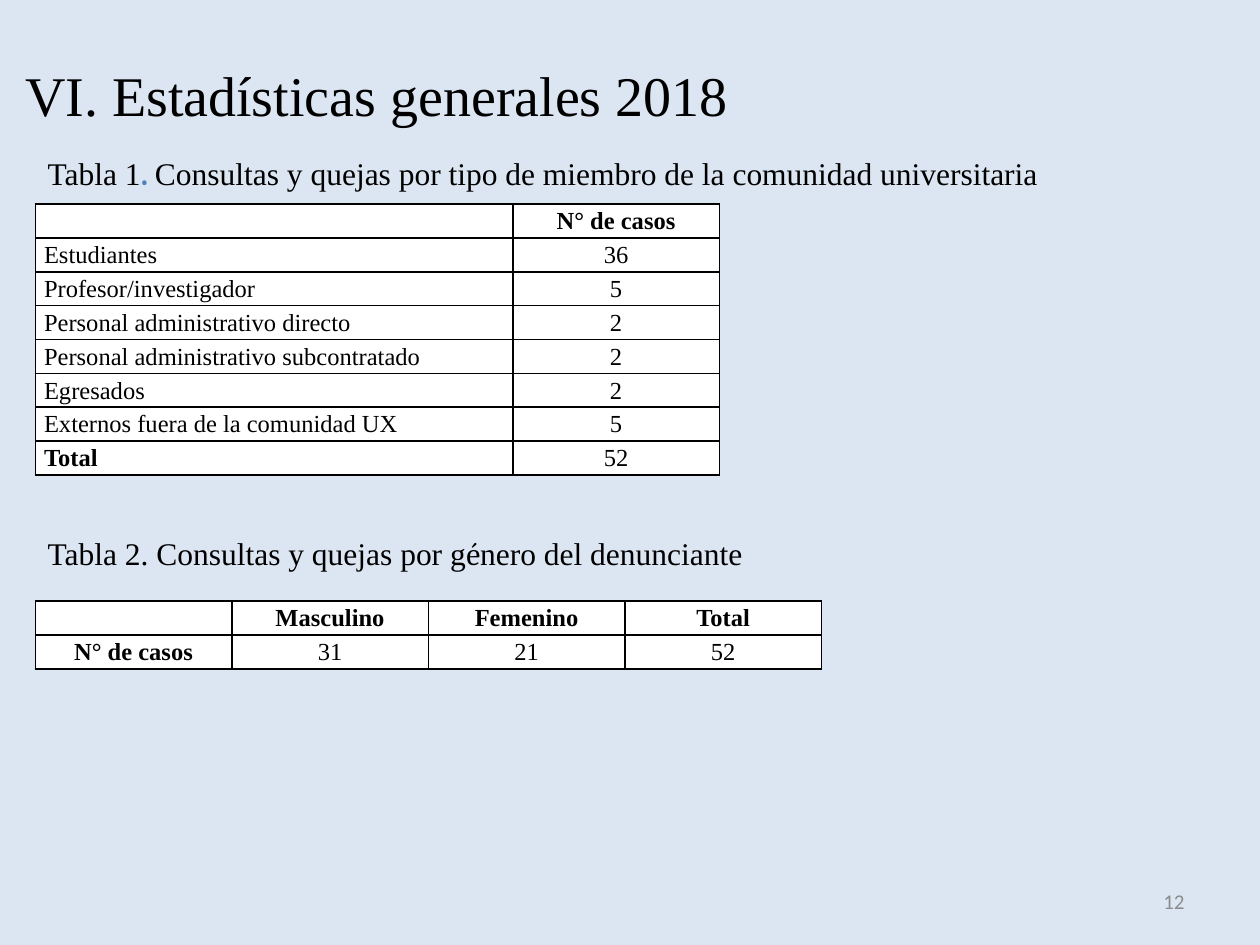
from lxml.etree import SubElement
from pptx import Presentation
from pptx.dml.color import RGBColor
from pptx.enum.text import MSO_ANCHOR as ANCHOR, PP_ALIGN as ALIGN
from pptx.oxml import parse_xml
from pptx.oxml.ns import nsdecls, qn
from pptx.util import Inches, Pt

SERIF = "Times New Roman"


def rgb(value):
    return RGBColor.from_string(value)


def add_runs(p, runs, size):
    """Add (text, font name, colour, bold) runs to a paragraph."""
    for text, name, color, bold in runs:
        r = p.add_run()
        r.text = text
        r.font.color.rgb = rgb(color)
        for key, value in {"name": name, "size": Pt(size), "bold": bold}.items():
            setattr(r.font, key, value)


prs = Presentation()
prs.slide_width, prs.slide_height = Inches(10), Inches(7.5)
s = prs.slides.add_slide(prs.slide_layouts[6])
s.background.fill.solid()
s.background.fill.fore_color.rgb = rgb("DCE6F2")

# Title, page number and table captions
caption = {"word_wrap": False, "vertical_anchor": ANCHOR.TOP,
           "margin_top": Inches(0.14), "margin_bottom": 0}
middle = {"word_wrap": True, "vertical_anchor": ANCHOR.MIDDLE}
texts = [
    ((0.1, 0.29, 9.75, 0.92), middle, ALIGN.LEFT, 32,
     [("VI. Estadísticas generales 2018", SERIF, "000000", False)]),
    ((7.17, 6.95, 2.33, 0.4), middle, ALIGN.RIGHT, 12,
     [("12", "Calibri", "8C8C8C", False)]),
    ((0.28, 1.08, 8.15, 0.75), caption, ALIGN.LEFT, 18,
     [("Tabla 1", SERIF, "000000", False),
      (". ", "Cambria", "4F81BD", True),
      ("Consultas y quejas por tipo de miembro de la comunidad universitaria",
       SERIF, "000000", False)]),
    ((0.28, 4.1, 5.78, 0.75), caption, ALIGN.LEFT, 18,
     [("Tabla 2. Consultas y quejas por g", SERIF, "000000", False),
      ("é", "Cambria", "000000", False),
      ("nero del denunciante", SERIF, "000000", False)]),
]
for box, frame, align, size, runs in texts:
    tf = s.shapes.add_textbox(*map(Inches, box)).text_frame
    for key, value in frame.items():
        setattr(tf, key, value)
    tf.paragraphs[0].alignment = align
    add_runs(tf.paragraphs[0], runs, size)

# Tables: top, column widths, row height, first-column alignment, rows, bold cells
tables = [
    (1.62, [3.79, 1.64], 0.256, ALIGN.JUSTIFY,
     [["", "N° de casos"],
      ["Estudiantes", "36"],
      ["Profesor/investigador", "5"],
      ["Personal administrativo directo", "2"],
      ["Personal administrativo subcontratado", "2"],
      ["Egresados", "2"],
      ["Externos fuera de la comunidad UX", "5"],
      ["Total", "52"]],
     {"N° de casos", "Total"}),
    (4.77, [1.56] * 4, 0.27, ALIGN.CENTER,
     [["", "Masculino", "Femenino", "Total"],
      ["N° de casos", "31", "21", "52"]],
     {"Masculino", "Femenino", "Total", "N° de casos"}),
]
cell_format = {"margin_left": Inches(0.07), "margin_right": Inches(0.07),
               "margin_top": 0, "margin_bottom": 0}
for top, widths, height, first_align, rows, bold in tables:
    tbl = s.shapes.add_table(len(rows), len(widths), Inches(0.28), Inches(top),
                             Inches(sum(widths)), Inches(height * len(rows))).table
    for col, width in zip(tbl.columns, widths):
        col.width = Inches(width)
    for i, row in enumerate(rows):
        tbl.rows[i].height = Inches(height)
        for j, text in enumerate(row):
            cell = tbl.cell(i, j)
            for key, value in cell_format.items():
                setattr(cell, key, value)
            p = cell.text_frame.paragraphs[0]
            p.alignment = ALIGN.CENTER if j else first_align
            p.line_spacing = 1.15
            if text:
                add_runs(p, [(text, SERIF, "000000", text in bold)], 14)
            else:  # keeps the empty corner cell from stretching its row
                SubElement(p._p, qn("a:endParaRPr")).set("sz", "1400")
            tcPr = cell._tc.get_or_add_tcPr()
            for side in ("lnL", "lnR", "lnT", "lnB"):
                tcPr.append(parse_xml(
                    f'<a:{side} {nsdecls("a")} w="12700"><a:solidFill>'
                    f'<a:srgbClr val="000000"/></a:solidFill></a:{side}>'))
            cell.fill.solid()
            cell.fill.fore_color.rgb = rgb("FFFFFF")

prs.save("out.pptx")
